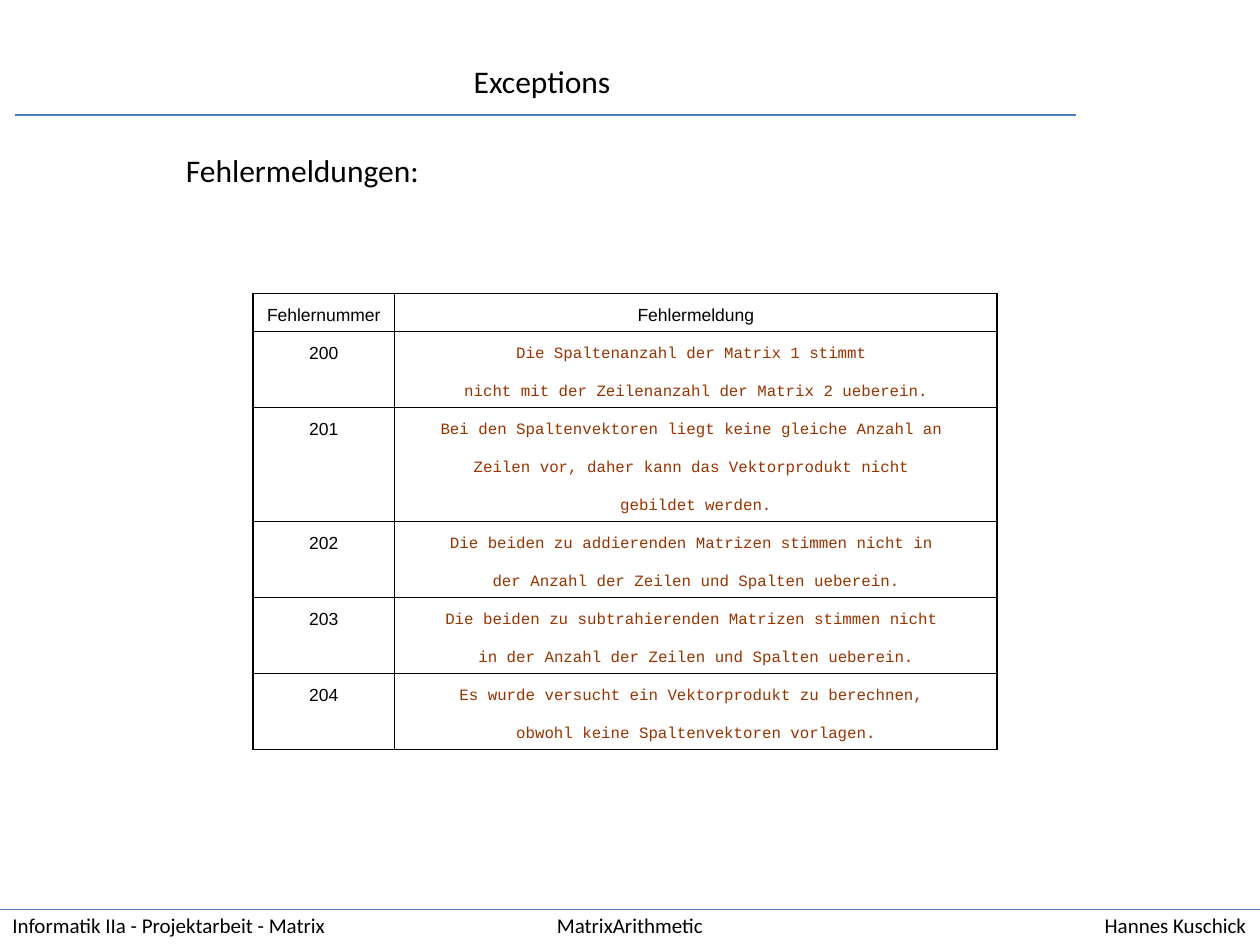
from lxml import etree
from pptx import Presentation
from pptx import util as u
from pptx.dml.color import RGBColor
from pptx.enum import shapes, text
from pptx.oxml import ns

ERRORS = [
    ("200", ["Die Spaltenanzahl der Matrix 1 stimmt ",
             "nicht mit der Zeilenanzahl der Matrix 2 ueberein."]),
    ("201", ["Bei den Spaltenvektoren liegt keine gleiche Anzahl an ",
             "Zeilen vor, daher kann das Vektorprodukt nicht ",
             "gebildet werden."]),
    ("202", ["Die beiden zu addierenden Matrizen stimmen nicht in ",
             "der Anzahl der Zeilen und Spalten ueberein."]),
    ("203", ["Die beiden zu subtrahierenden Matrizen stimmen nicht ",
             "in der Anzahl der Zeilen und Spalten ueberein."]),
    ("204", ["Es wurde versucht ein Vektorprodukt zu berechnen, ",
             "obwohl keine Spaltenvektoren vorlagen."]),
]
LABEL = dict(size=10, font="Arial")
CODE = dict(size=9, font="Courier New", color="993300")


def paint(hexa):
    return RGBColor.from_string(hexa)


def write(frame, words, size=18, font="Calibri", color="000000", center=False):
    par = frame.paragraphs[0]
    if center:
        par.alignment = text.PP_ALIGN.CENTER
    if not words:
        # an empty cell keeps the small size, so its row does not grow
        par._p.get_or_add_endParaRPr().set("sz", str(size * 100))
        return
    run = par.add_run()
    run.text = words
    run.font.size = u.Pt(size)
    run.font.name = font
    run.font.color.rgb = paint(color)


def edge(cell, sides):
    """Draw black borders on the given sides (of L, R, T, B), none elsewhere."""
    props = cell._tc.get_or_add_tcPr()
    for spot, side in enumerate("LRTB"):
        line = etree.Element(ns.qn(f"a:ln{side}"), w=str(u.Pt(1)))
        if side in sides:
            fill = etree.SubElement(line, ns.qn("a:solidFill"))
            etree.SubElement(fill, ns.qn("a:srgbClr"), val="000000")
        else:
            etree.SubElement(line, ns.qn("a:noFill"))
        props.insert(spot, line)


class Page:
    def __init__(self, slide, rule):
        self.slide = slide
        self.rule = rule

    def line(self, left, right, top):
        line = self.slide.shapes.add_connector(
            shapes.MSO_CONNECTOR.STRAIGHT,
            u.Cm(left), u.Cm(top), u.Cm(right), u.Cm(top))
        line.line.color.rgb = paint(self.rule)
        line.line.width = u.Pt(0.75)
        etree.SubElement(line._element.spPr, ns.qn("a:effectLst"))

    def label(self, words, left, top, width, height, wrap=False, **look):
        box = self.slide.shapes.add_textbox(
            u.Cm(left), u.Cm(top), u.Cm(width), u.Cm(height))
        frame = box.text_frame
        frame.word_wrap = wrap
        frame.auto_size = text.MSO_AUTO_SIZE.SHAPE_TO_FIT_TEXT
        write(frame, words, **look)

    def table(self, groups, left, top, widths, height):
        """Each group is a list of rows in one frame; a row lists (words, look)."""
        count = sum(len(group) for group in groups)
        table = self.slide.shapes.add_table(
            count, len(widths), u.Cm(left), u.Cm(top),
            u.Cm(sum(widths)), u.Cm(height)).table
        table.first_row = table.horz_banding = False
        for col, width in zip(table.columns, widths):
            col.width = u.Cm(width)
        rows = iter(table.rows)
        for group in groups:
            for nth, line in enumerate(group):
                sides = "LR" + "T" * (nth == 0) + "B" * (nth == len(group) - 1)
                for cell, (words, look) in zip(next(rows).cells, line):
                    cell.fill.background()
                    cell.vertical_anchor = text.MSO_ANCHOR.BOTTOM
                    cell.margin_left = cell.margin_right = u.Cm(0.2)
                    edge(cell, sides)
                    write(cell.text_frame, words, center=True, **look)


def main():
    deck = Presentation()
    deck.slide_width, deck.slide_height = u.Cm(25.4), u.Cm(19.05)
    page = Page(deck.slides.add_slide(deck.slide_layouts[6]), "4B7EBC")

    page.label("Fehlermeldungen:", 3.5, 2.92, 5.23, 1.03)
    page.label("Exceptions", 9.3, 1.12, 3.3, 1.03)
    page.line(0.3, 21.7, 2.32)

    page.line(0, 25.4, 18.33)
    foot = dict(top=18.28, height=0.77, size=12)
    page.label("Informatik IIa - Projektarbeit - Matrix", 0, width=6.88, **foot)
    page.label("Hannes Kuschick", 22.02, width=3.38, **foot)
    page.label("MatrixArithmetic", 0, width=25.4, wrap=True, center=True, **foot)

    groups = [[[("Fehlernummer", LABEL), ("Fehlermeldung", LABEL)]]]
    for code, lines in ERRORS:
        groups.append([[("" if nth else code, LABEL), (words, CODE)]
                       for nth, words in enumerate(lines)])
    page.table(groups, 5.1, 5.92, [2.85, 12.15], 9.2)

    deck.save("out.pptx")


if __name__ == "__main__":
    main()
